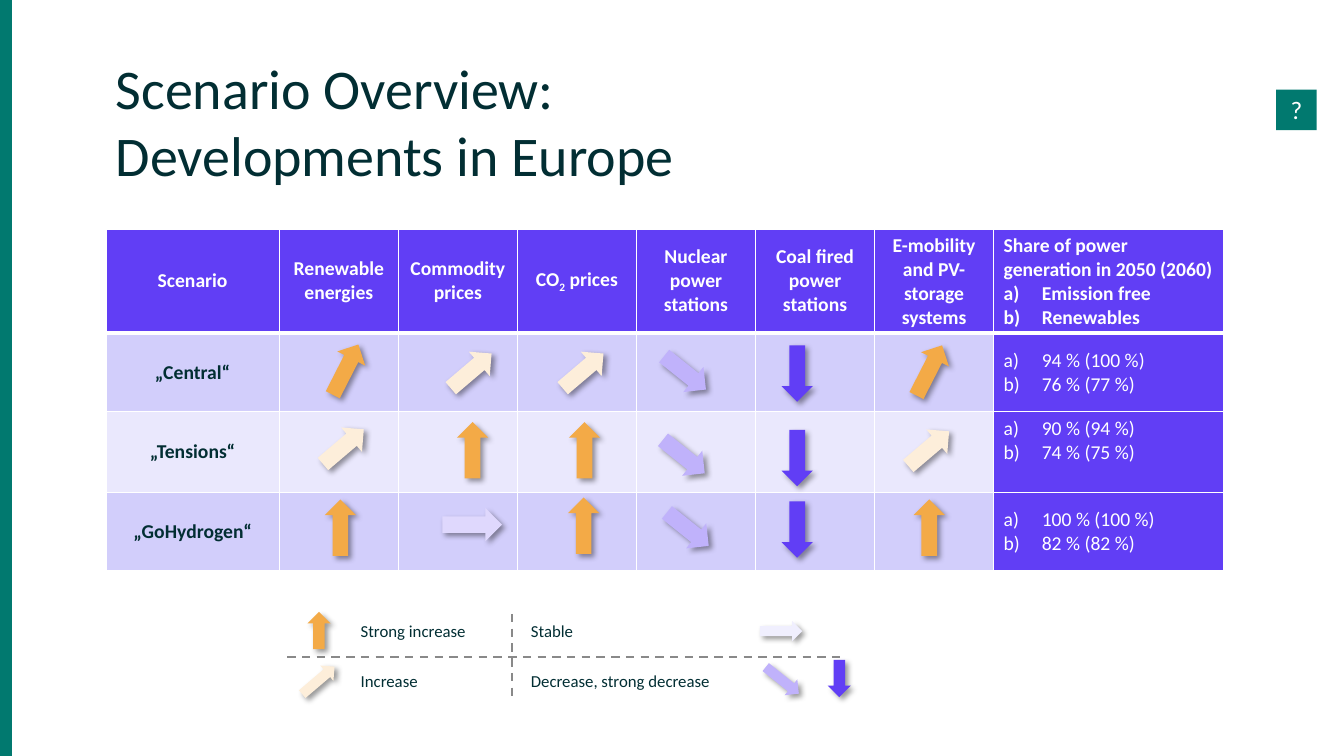
from lxml import etree
from pptx import Presentation
from pptx.dml.color import RGBColor
from pptx.enum.dml import MSO_LINE
from pptx.enum.shapes import MSO_CONNECTOR, MSO_SHAPE
from pptx.enum.text import MSO_ANCHOR, PP_ALIGN
from pptx.oxml import parse_xml
from pptx.oxml.ns import nsdecls, qn
from pptx.util import Cm, Pt

RECT, ARROW = MSO_SHAPE.RECTANGLE, MSO_SHAPE.RIGHT_ARROW
LINE, DASH = MSO_CONNECTOR.STRAIGHT, MSO_LINE.DASH
TOP, MIDDLE, BOTTOM = MSO_ANCHOR.TOP, MSO_ANCHOR.MIDDLE, MSO_ANCHOR.BOTTOM
LEFT, CENTER = PP_ALIGN.LEFT, PP_ALIGN.CENTER

TEAL, INK, WHITE, GREY = "01796F", "022E33", "FFFFFF", "898989"
VIOLET, LILAC, PALE = "613EF5", "D2CEFB", "EAE8FD"
ORANGE, CREAM, MAUVE = "F3AA47", "FDEEDA", "C0B2FB"

KINDS = {
    "up": (270, ORANGE, 1.42, 0.79),
    "steep": (297, ORANGE, 1.42, 0.79),
    "rise": (319.6, CREAM, 1.35, 0.81),
    "flat": (0, "DFD8FD", 1.5, 0.84),
    "fall": (38.7, MAUVE, 1.35, 0.81),
    "down": (90, VIOLET, 1.42, 0.79),
}

HEADS = [
    ["Scenario"], ["Renewable energies"], ["Commodity prices"],
    ["CO", "2", " prices"], ["Nuclear power stations"],
    ["Coal fired power stations"], ["E-mobility and PV-storage systems"],
]
SHARE = "Share of power generation in 2050 (2060)"
ITEMS = ["Emission free", "Renewables"]

ROWS = [
    ("„Central“", LILAC, MIDDLE, ["94 % (100 %)", "76 % (77 %)"],
     [("steep", 8, 8.92), ("rise", 11.2, 8.94), ("rise", 14.02, 8.94),
      ("fall", 16.59, 8.99), ("down", 19.38, 9.02), ("steep", 22.71, 8.94)]),
    ("„Tensions“", PALE, TOP, ["90 % (94 %)", "74 % (75 %)"],
     [("rise", 7.98, 10.85), ("up", 11.2, 10.95), ("up", 14.02, 10.95),
      ("fall", 16.56, 11.1), ("down", 19.38, 11.15), ("rise", 22.73, 10.9)]),
    ("„GoHydrogen“", LILAC, MIDDLE, ["100 % (100 %)", "82 % (82 %)"],
     [("up", 7.87, 12.9), ("flat", 11.15, 12.8), ("up", 14, 12.85),
      ("fall", 16.66, 12.93), ("down", 19.38, 12.95), ("up", 22.71, 12.9)]),
]
WIDTHS = [4.37] + [3] * 6 + [5.79]
HEIGHTS = [2.62, 1.98, 2.03, 1.98]

KEYS = [("Strong increase", 8.99, 15.54, 2.87), ("Increase", 8.99, 16.79, 1.65),
        ("Stable", 13.28, 15.54, 1.27),
        ("Decrease, strong decrease", 13.28, 16.79, 4.93)]
MARKS = [("up", 7.57, 15.6, 0.94, 0.58), ("rise", 7.49, 16.89, 1.07, 0.51),
         ("flat", 19.15, 15.65, 1.07, 0.51), ("fall", 19.18, 16.89, 1.07, 0.51),
         ("down", 20.68, 16.81, 0.94, 0.58)]


def tint(text):
    return RGBColor.from_string(text)


def apply(item, form):
    for name, value in form.items():
        setattr(item, name, value)


def write(para, parts, size, hue, bold=False, **form):
    apply(para, form)
    for part in parts:
        run = para.add_run()
        run.text = part
        apply(run.font, {"name": "Calibri", "size": Pt(size), "bold": bold})
        run.font.color.rgb = tint(hue)
    return para


def letter(para):
    props = para._p.get_or_add_pPr()
    props.set("marL", str(Cm(0.96)))
    props.set("indent", str(-Cm(0.96)))
    etree.SubElement(props, qn("a:buAutoNum")).set("type", "alphaLcParenR")


def listing(frame, items, bold=False):
    for n, item in enumerate(items):
        para = frame.add_paragraph() if n or bold else frame.paragraphs[0]
        letter(para)
        write(para, [item], 14, WHITE, bold, alignment=LEFT)


def shape(slide, kind, box, hue):
    item = slide.shapes.add_shape(kind, *map(Cm, box))
    item.shadow.inherit = False
    item.fill.solid()
    item.fill.fore_color.rgb = tint(hue)
    item.line.fill.background()
    return item


def arrow(slide, kind, left, top, wide=None, high=None, hue=None):
    turn, base, width, height = KINDS[kind]
    item = shape(slide, ARROW, (left, top, wide or width, high or height), hue or base)
    item.rotation = turn
    glow = item._element.spPr.find(qn("a:effectLst"))
    glow.append(parse_xml(
        f'<a:outerShdw {nsdecls("a")} blurRad="{Pt(4)}" dist="{Pt(3)}" '
        f'dir="2700000" algn="tl" rotWithShape="0"><a:srgbClr val="000000">'
        f'<a:alpha val="40000"/></a:srgbClr></a:outerShdw>'))


def label(slide, box, wrap, anchor, inset=None):
    frame = slide.shapes.add_textbox(*map(Cm, box)).text_frame
    apply(frame, {"word_wrap": wrap, "vertical_anchor": anchor})
    if inset:
        sides = ("left", "top", "right", "bottom")
        apply(frame, {f"margin_{side}": Cm(inset) for side in sides})
    return frame


def rule(slide, ends):
    item = slide.shapes.add_connector(LINE, *map(Cm, ends))
    apply(item.line, {"width": Pt(1.5), "dash_style": DASH})
    item.line.color.rgb = tint(GREY)
    etree.SubElement(item._element.spPr, qn("a:effectLst"))


def paint(cell, hue, anchor, top, base):
    props = cell._tc.get_or_add_tcPr()
    for side, width in zip("LRTB", (1, 1, top, base)):
        props.append(parse_xml(
            f'<a:ln{side} {nsdecls("a")} w="{Pt(width)}"><a:solidFill>'
            f'<a:srgbClr val="{WHITE}"/></a:solidFill></a:ln{side}>'))
    cell.fill.solid()
    cell.fill.fore_color.rgb = tint(hue)
    cell.vertical_anchor = anchor


def table(slide):
    size = (2.67, 5.77, sum(WIDTHS), sum(HEIGHTS))
    grid = slide.shapes.add_table(len(HEIGHTS), len(WIDTHS), *map(Cm, size)).table
    for col, width in zip(grid.columns, WIDTHS):
        col.width = Cm(width)
    for row, height in zip(grid.rows, HEIGHTS):
        row.height = Cm(height)
    last = len(HEADS)
    for n in range(last + 1):
        paint(grid.cell(0, n), VIOLET, MIDDLE, 1, 3)
    for n, parts in enumerate(HEADS):
        para = grid.cell(0, n).text_frame.paragraphs[0]
        write(para, parts, 14, WHITE, True, alignment=CENTER)
        if len(parts) > 1:
            para.runs[1]._r.get_or_add_rPr().set("baseline", "-25000")
    frame = grid.cell(0, last).text_frame
    write(frame.paragraphs[0], [SHARE], 14, WHITE, True)
    listing(frame, ITEMS, True)
    for r, (name, hue, anchor, shares, _) in enumerate(ROWS, 1):
        for n in range(last):
            paint(grid.cell(r, n), hue, MIDDLE, 3 if r == 1 else 1, 1)
        paint(grid.cell(r, last), VIOLET, anchor, 3 if r == 1 else 1, 1)
        para = grid.cell(r, 0).text_frame.paragraphs[0]
        write(para, [name], 14, INK, True, alignment=CENTER)
        listing(grid.cell(r, last).text_frame, shares)


def title(slide):
    frame = label(slide, (2.67, 1.4, 23.52, 3.45), True, BOTTOM)
    first, second = frame.paragraphs[0], frame.add_paragraph()
    write(first, ["Scenario Overview:"], 40, INK, line_spacing=Pt(38))
    write(second, ["Developments in Europe"], 40, INK,
          line_spacing=Pt(38), space_before=Pt(10))


def legend(slide):
    for text, left, top, width in KEYS:
        frame = label(slide, (left, top, width, 0.71), False, TOP, 0.1)
        write(frame.paragraphs[0], [text], 12, INK)
    rule(slide, (7.24, 16.56, 21.21, 16.56))
    rule(slide, (12.9, 15.47, 12.9, 17.58))
    for mark in MARKS:
        arrow(slide, *mark, hue="F0EFFE" if mark[0] == "flat" else None)


def main():
    deck = Presentation()
    apply(deck, {"slide_width": Cm(33.87), "slide_height": Cm(19.05)})
    slide = deck.slides.add_slide(deck.slide_layouts[6])
    shape(slide, RECT, (0, 0, 0.3, 19.05), TEAL)
    title(slide)
    table(slide)
    legend(slide)
    for row in ROWS:
        for spot in row[-1]:
            arrow(slide, *spot)
    help_box = shape(slide, RECT, (32.16, 2.26, 1.02, 1.02), TEAL)
    help_box.text_frame.vertical_anchor = MIDDLE
    write(help_box.text_frame.paragraphs[0], ["?"], 18, WHITE, alignment=CENTER)
    deck.save("out.pptx")


if __name__ == "__main__":
    main()
